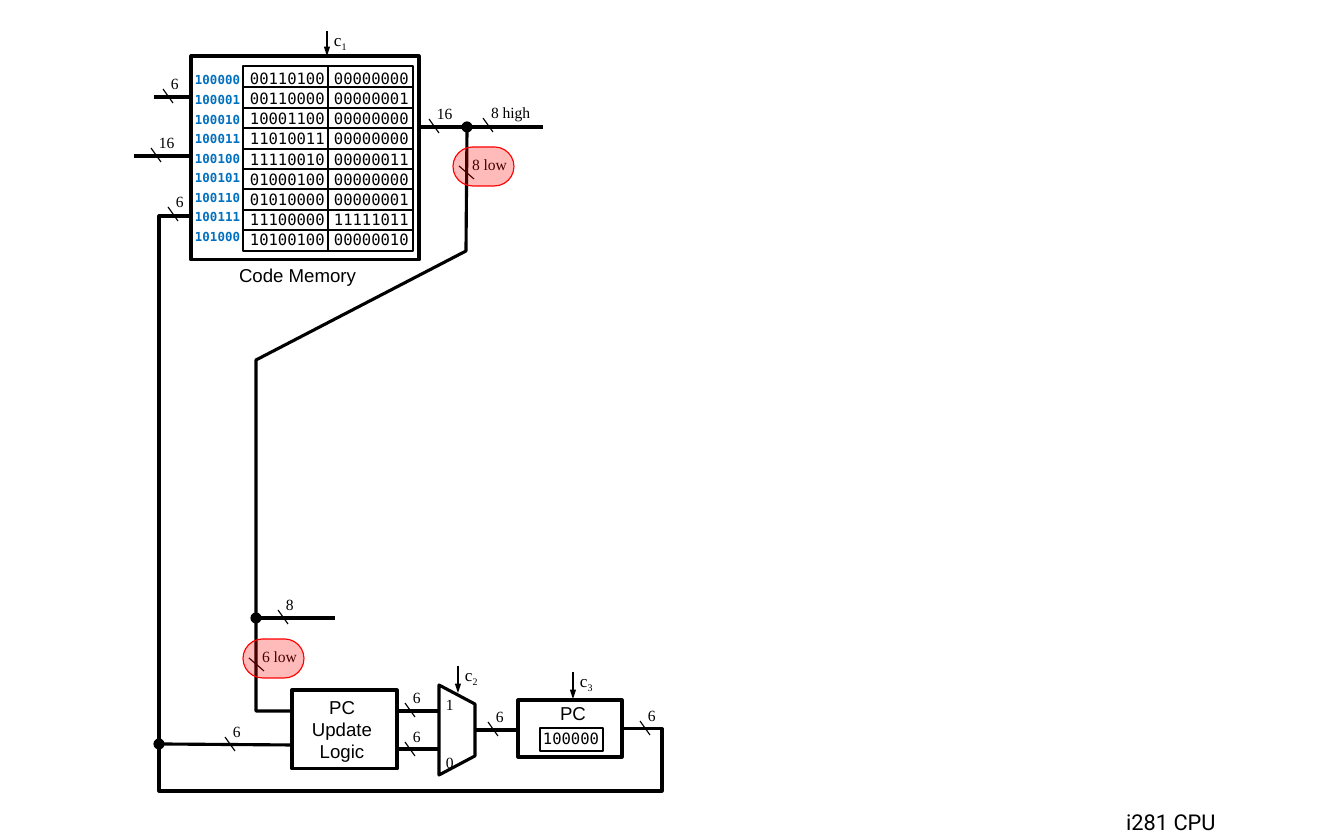
"""Build the i281 CPU slide showing the code memory and program counter path."""
from pptx import Presentation
from pptx.dml.color import RGBColor
from pptx.enum.shapes import MSO_CONNECTOR, MSO_SHAPE
from pptx.enum.text import MSO_AUTO_SIZE, PP_ALIGN
from pptx.oxml.xmlchemy import OxmlElement
from pptx.util import Pt

SCALE = 914400 / 112
BLACK = RGBColor(0, 0, 0)
BLUE = RGBColor(0x00, 0x70, 0xC0)
RED = RGBColor(0xFF, 0, 0)
SERIF = "Times New Roman"
SANS = "Arial"
MONO = "DejaVu Sans Mono"
LEFT, CENTER = PP_ALIGN.LEFT, PP_ALIGN.CENTER
STRAIGHT = MSO_CONNECTOR.STRAIGHT
FIT_SHAPE = MSO_AUTO_SIZE.SHAPE_TO_FIT_TEXT
RECTANGLE, OVAL = MSO_SHAPE.RECTANGLE, MSO_SHAPE.OVAL
TRAPEZOID, PILL = MSO_SHAPE.TRAPEZOID, MSO_SHAPE.ROUNDED_RECTANGLE

deck = Presentation()
deck.slide_width = round(1344 * SCALE)
deck.slide_height = round(840 * SCALE)
page = deck.slides.add_slide(deck.slide_layouts[6])


def add_text(text, area, size, font, color=BLACK, align=LEFT, before=0, bold=False):
    box = page.shapes.add_textbox(*[round(value * SCALE) for value in area])
    frame = box.text_frame
    frame.word_wrap = False
    frame.auto_size = FIT_SHAPE
    frame.text = text
    for para in frame.paragraphs:
        para.alignment = align
        para.space_before = Pt(before)
        for span in para.runs:
            span.font.size = Pt(size)
            span.font.name = font
            span.font.bold = bold
            span.font.color.rgb = color
    return frame


def add_line(start_x, start_y, end_x, end_y, width):
    ends = [round(value * SCALE) for value in (start_x, start_y, end_x, end_y)]
    line = page.shapes.add_connector(STRAIGHT, *ends)
    line.line.color.rgb = BLACK
    line.line.width = Pt(width)
    line._element.spPr.append(OxmlElement("a:effectLst"))
    return line


title = add_text("i281 CPU", (1115, 803, 116, 36), 14, "Roboto")
title.margin_bottom = 0
add_text("Code Memory", (228, 258, 146, 34), 12, SANS)
add_text("PC", (549, 696, 49, 34), 12, SANS)
add_text("PC\nUpdate\nLogic", (300, 690, 84, 80), 12, SANS, align=CENTER)
add_text("100000", (532, 723, 80, 30), 10, MONO)
for digit, top in (("1", 689), ("0", 747)):
    add_text(digit, (435, top, 30, 30), 10, SERIF)

addresses = [f"{number:06b}" for number in range(32, 41)]
add_text("\n".join(addresses), (184, 67, 74, 185), 8, MONO, BLUE, before=3, bold=True)
instructions = [
    "00110100 00000000",
    "00110000 00000001",
    "10001100 00000000",
    "11010011 00000000",
    "11110010 00000011",
    "01000100 00000000",
    "01010000 00000001",
    "11100000 11111011",
    "10100100 00000010",
]
add_text("\n".join(instructions), (239, 63, 183, 194), 10, MONO, before=1)
add_line(328, 66, 328, 252, 1)
for row in range(1, len(instructions)):
    divider = 67 + round(row * 20.4)
    add_line(243, divider, 413, divider, 1)

outlines = [
    (RECTANGLE, (191, 56, 228, 204), 2),
    (RECTANGLE, (243, 66, 170, 185), 1.25),
    (RECTANGLE, (292, 690, 105, 79), 2),
    (RECTANGLE, (518, 700, 104, 57), 2),
    (RECTANGLE, (540, 728, 63, 23), 1.25),
    (TRAPEZOID, (412, 712, 90, 36), 2),
]
for kind, area, width in outlines:
    outline = page.shapes.add_shape(kind, *[round(value * SCALE) for value in area])
    outline.shadow.inherit = False
    outline.fill.background()
    outline.line.color.rgb = BLACK
    outline.line.width = Pt(width)
    if kind == TRAPEZOID:
        outline.rotation = 90
        outline.adjustments[0] = 0.53

wires = [
    (154, 97, 192, 97),
    (134, 156, 192, 156),
    (419, 127, 543, 127),
    (257, 618, 335, 618),
    (397, 711, 439, 711),
    (397, 749, 440, 749),
    (474, 730, 518, 730),
    (159, 744, 291, 745),
]
for wire in wires:
    add_line(*wire, 2)

low_byte_path = [(292, 711), (256, 711), (256, 360), (466, 251), (467, 129)]
feedback_path = [(624, 729), (662, 729), (662, 791), (159, 791), (159, 216), (191, 216)]
for points in (low_byte_path, feedback_path):
    builder = page.shapes.build_freeform(*points[0], scale=SCALE)
    builder.add_line_segments(points[1:], close=False)
    route = builder.convert_to_shape()
    route.shadow.inherit = False
    route.fill.background()
    route.line.color.rgb = BLACK
    route.line.width = Pt(2)

for center_x, center_y in ((256, 618), (467, 127), (159, 744)):
    area = (center_x - 4, center_y - 4, 8, 8)
    joint = page.shapes.add_shape(OVAL, *[round(value * SCALE) for value in area])
    joint.shadow.inherit = False
    joint.fill.solid()
    joint.fill.fore_color.rgb = BLACK
    joint.line.color.rgb = BLACK
    joint.line.width = Pt(2)

bus_labels = [
    ("6", 160, 68, 30),
    ("16", 148, 127, 38),
    ("6", 165, 186, 30),
    ("16", 426, 98, 38),
    ("8 high", 480, 97, 63),
    ("8", 275, 589, 30),
    ("6", 402, 682, 30),
    ("6", 402, 721, 30),
    ("6", 485, 701, 30),
    ("6", 222, 716, 30),
    ("6", 637, 700, 30),
]
for label, left, top, width in bus_labels:
    add_text(label, (left, top, width, 30), 10, SERIF)
    add_line(left + 3, top + 21, left + 13, top + 35, 0.75)

for number, left, top, length in (("1", 327, 31, 25), ("2", 458, 666, 27), ("3", 573, 672, 27)):
    frame = add_text("c", (left - 4, top - 7, 36, 32), 11, SERIF)
    subscript = frame.paragraphs[0].add_run()
    subscript.text = number
    subscript.font.size = Pt(11)
    subscript.font.name = SERIF
    subscript.font.color.rgb = BLACK
    subscript._r.get_or_add_rPr().set("baseline", "-25000")
    arrow = add_line(left, top, left, top + length, 1.75)
    head = OxmlElement("a:tailEnd")
    head.set("type", "triangle")
    head.set("w", "sm")
    arrow.line._get_or_add_ln().append(head)

for label, left, top in (("8 low", 453, 147), ("6 low", 243, 639)):
    add_text(label, (left + 8, top + 2, 58, 30), 10, SERIF)
    add_line(left + 6, top + 19, left + 21, top + 32, 0.75)
    area = (left, top, 61, 39)
    highlight = page.shapes.add_shape(PILL, *[round(value * SCALE) for value in area])
    highlight.adjustments[0] = 0.5
    highlight.shadow.inherit = False
    highlight.fill.solid()
    highlight.fill.fore_color.rgb = RED
    alpha = OxmlElement("a:alpha")
    alpha.set("val", "27000")
    highlight._element.spPr.find(".//{*}srgbClr").append(alpha)
    highlight.line.color.rgb = RED
    highlight.line.width = Pt(0.75)

deck.save("out.pptx")
